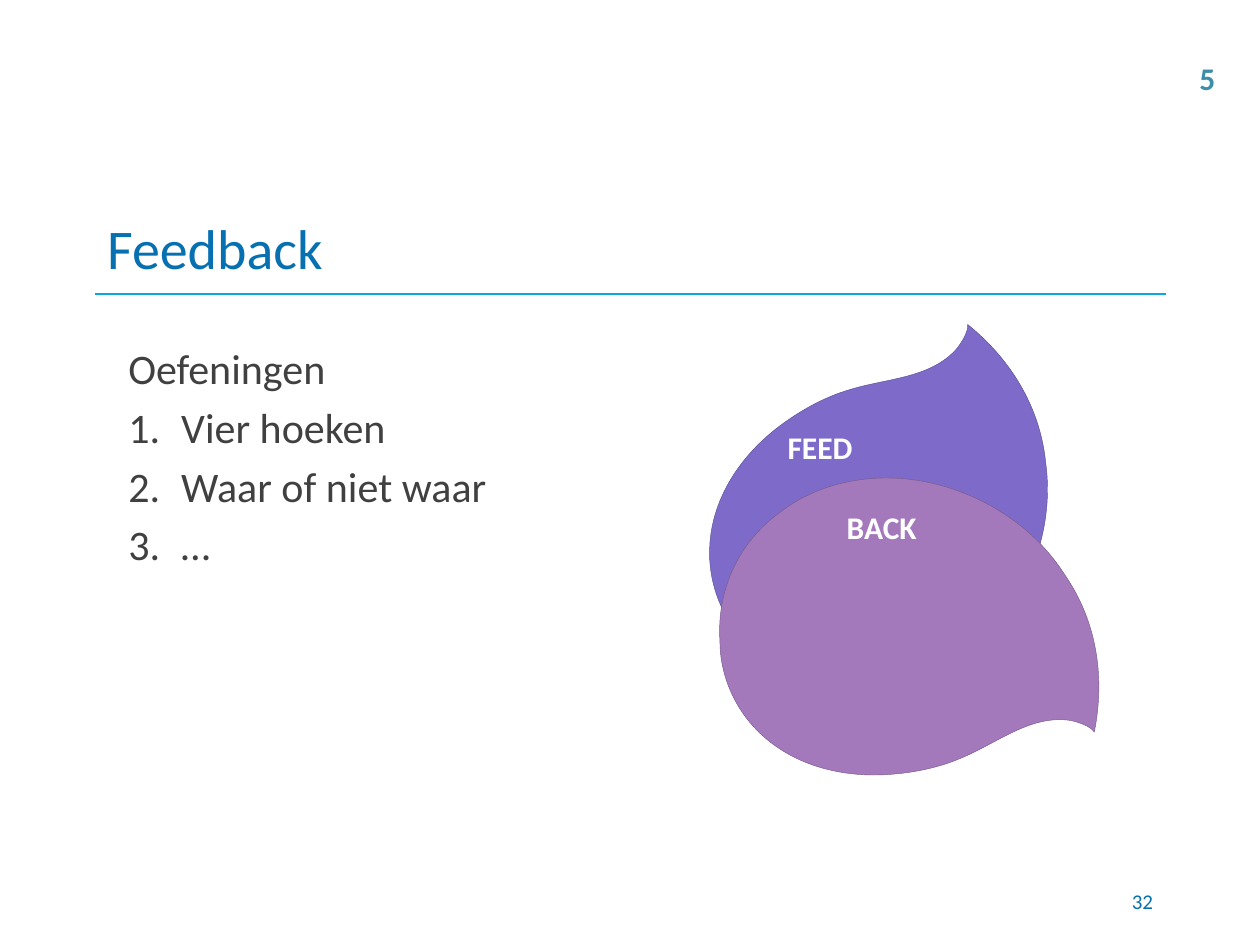
"""Build the Feedback slide: a numbered exercise list beside two overlapping petals."""
from dataclasses import dataclass

from lxml.etree import SubElement
from pptx import Presentation
from pptx.dml.color import RGBColor
from pptx.enum.shapes import MSO_CONNECTOR as Connector
from pptx.enum.text import MSO_ANCHOR as Anchor, PP_ALIGN as Align
from pptx.oxml.ns import qn
from pptx.util import Inches, Pt

FONT = "Calibri"
COLORS = {
    "white": "FFFFFF", "title": "0770B1", "rule": "0BA7DF", "body": "404040",
    "corner": "3E8EA9", "feed": "7E6BC9", "feed_edge": "5D4F95",
    "back": "A379BB", "back_edge": "795A8A",
}
RULE_TOP = 7 / 3
PETAL_WIDTH, PETAL_HEIGHT = 2.95, 2.36
PETAL_START, PETAL_TIP = (2.84, 2.27), (2.82, 2.24)
PETAL_CURVES = [
    ((2.78, 2.2), (2.72, 2.17), (2.67, 2.15)),
    ((2.36, 2.05), (2.06, 2.24), (1.75, 2.31)),
    ((1.59, 2.35), (1.41, 2.36), (1.25, 2.35)),
    ((0.82, 2.33), (0.4, 2.15), (0.17, 1.79)),
    ((0.04, 1.59), (-0.02, 1.33), (0.02, 1.09)),
    ((0.06, 0.66), (0.31, 0.33), (0.64, 0.16)),
    ((1.07, -0.08), (1.64, -0.05), (2.11, 0.23)),
    ((2.42, 0.41), (2.67, 0.68), (2.81, 1.01)),
    ((2.98, 1.37), (3.01, 1.81), PETAL_START),
]
Point = tuple[float, float]


@dataclass(frozen=True)
class Petal:
    """A placed petal, turned and optionally mirrored."""
    fill: str
    edge: str
    left: float
    top: float
    rotation: float
    mirrored: bool


@dataclass(frozen=True)
class Label:
    """A single line of text in a box."""
    text: str
    left: float
    top: float
    width: float
    size: int
    color: str
    bold: bool = True
    inset: float = 0.05
    align: Align = Align.LEFT
    anchor: Anchor = Anchor.TOP
    wrap: bool = True


PETALS = [
    Petal("feed", "feed_edge", 5.59, 3.03, 149.2, True),
    Petal("back", "back_edge", 5.69, 3.77, 350.9, False),
]
LABELS = [
    Label("BACK", 6.67, 3.98, 1.31, 18, "white"),
    Label("FEED", 6.2, 3.35, 1.31, 18, "white"),
    Label("5", 9.42, 0.42, 0.33, 18, "corner", inset=0.1, wrap=False),
    Label("32", 7.17, 6.95, 2.08, 12, "title", bold=False, inset=0.1,
          align=Align.RIGHT, anchor=Anchor.MIDDLE),
]
EXERCISES = ["Vier hoeken", "Waar of niet waar", "…"]


def rgb(name: str) -> RGBColor:
    """Look up a named colour."""
    return RGBColor.from_string(COLORS[name])


def style(para, size: int, color: str, bold: bool = False) -> None:
    """Set the font of a whole paragraph."""
    para.font.name = FONT
    para.font.size = Pt(size)
    para.font.bold = bold
    para.font.color.rgb = rgb(color)


def add_step(outline, tag: str, points: tuple[Point, ...], mirrored: bool) -> None:
    """Append one drawing step to a freeform outline."""
    step = SubElement(outline, qn(tag))
    for x, y in points:
        across = PETAL_WIDTH - x if mirrored else x
        SubElement(step, qn("a:pt"), x=str(Inches(across)), y=str(Inches(y)))


def draw_petal(slide, petal: Petal) -> None:
    """Draw one petal as a filled freeform with curved sides."""
    builder = slide.shapes.build_freeform(*PETAL_START, scale=Inches(1))
    builder.add_line_segments([PETAL_TIP, *(curve[-1] for curve in PETAL_CURVES)])
    shape = builder.convert_to_shape()
    outline = next(shape._element.iter(qn("a:path")))
    outline.clear()
    outline.set("w", str(Inches(PETAL_WIDTH)))
    outline.set("h", str(Inches(PETAL_HEIGHT)))
    add_step(outline, "a:moveTo", (PETAL_START,), petal.mirrored)
    add_step(outline, "a:lnTo", (PETAL_TIP,), petal.mirrored)
    for curve in PETAL_CURVES:
        add_step(outline, "a:cubicBezTo", curve, petal.mirrored)
    SubElement(outline, qn("a:close"))
    shape.left, shape.top = Inches(petal.left), Inches(petal.top)
    shape.width, shape.height = Inches(PETAL_WIDTH), Inches(PETAL_HEIGHT)
    shape.rotation = petal.rotation
    shape.shadow.inherit = False
    shape.fill.solid()
    shape.fill.fore_color.rgb = rgb(petal.fill)
    shape.line.color.rgb = rgb(petal.edge)
    shape.line.width = Pt(0.25)


def draw_label(slide, label: Label) -> None:
    """Draw one line of text."""
    box = slide.shapes.add_textbox(
        Inches(label.left), Inches(label.top), Inches(label.width), Inches(0.4))
    frame = box.text_frame
    frame.word_wrap = label.wrap
    frame.vertical_anchor = label.anchor
    frame.margin_left = frame.margin_right = Inches(label.inset)
    para = frame.paragraphs[0]
    para.text = label.text
    para.alignment = label.align
    style(para, label.size, label.color, label.bold)


def draw_title(slide) -> None:
    """Fill the title and draw the rule under it."""
    title = slide.shapes.title
    title.left, title.top = Inches(0.75), Inches(RULE_TOP - 0.75)
    title.width, title.height = Inches(8.5), Inches(0.75)
    title.text_frame.vertical_anchor = Anchor.MIDDLE
    para = title.text_frame.paragraphs[0]
    para.text = "Feedback"
    para.alignment = Align.LEFT
    style(para, 32, "title")
    rule = slide.shapes.add_connector(
        Connector.STRAIGHT, Inches(0.75), Inches(RULE_TOP), Inches(9.25), Inches(RULE_TOP))
    rule.line.color.rgb = rgb("rule")
    rule.line.width = Pt(0.75)
    SubElement(rule._element.spPr, qn("a:effectLst"))


def draw_exercises(slide) -> None:
    """Draw the heading and the numbered exercises."""
    box = slide.shapes.add_textbox(Inches(0.92), Inches(2.67), Inches(8.5), Inches(4.08))
    box.fill.solid()
    box.fill.fore_color.rgb = rgb("white")
    frame = box.text_frame
    frame.word_wrap = True
    heading = frame.paragraphs[0]
    heading.text = "Oefeningen"
    style(heading, 24, "body")
    for exercise in EXERCISES:
        para = frame.add_paragraph()
        para.text = exercise
        para.space_before = Pt(4.8)
        properties = para._p.get_or_add_pPr()
        properties.set("marL", str(Inches(0.42)))
        properties.set("indent", str(-Inches(0.42)))
        SubElement(properties, qn("a:buFont"), typeface=FONT)
        SubElement(properties, qn("a:buAutoNum"), type="arabicPeriod")
        style(para, 24, "body")


def main() -> None:
    """Assemble and save the deck."""
    deck = Presentation()
    deck.slide_width, deck.slide_height = Inches(10), Inches(7.5)
    slide = deck.slides.add_slide(deck.slide_layouts[5])
    draw_title(slide)
    draw_exercises(slide)
    for petal in PETALS:
        draw_petal(slide, petal)
    for label in LABELS:
        draw_label(slide, label)
    deck.save("out.pptx")


if __name__ == "__main__":
    main()
